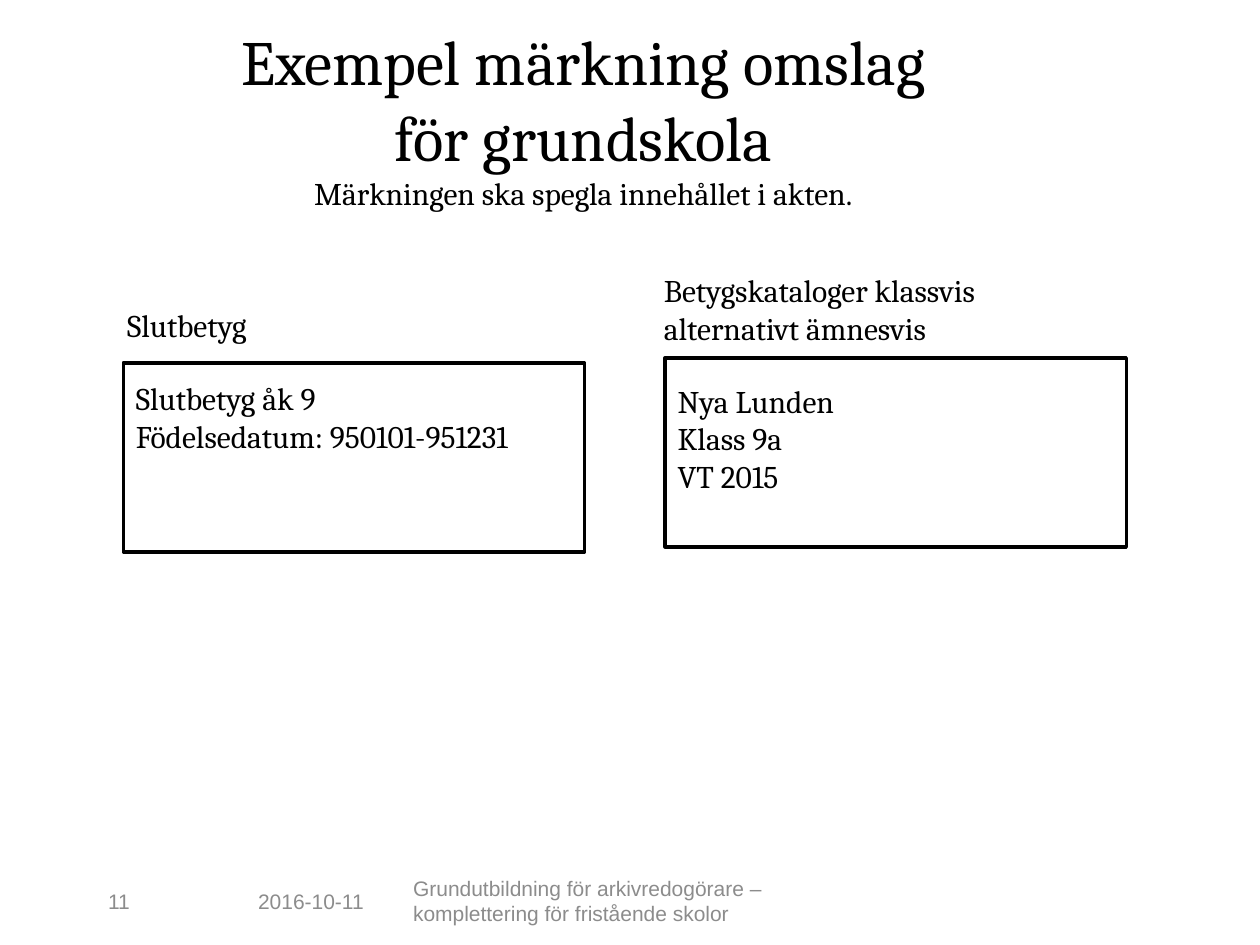
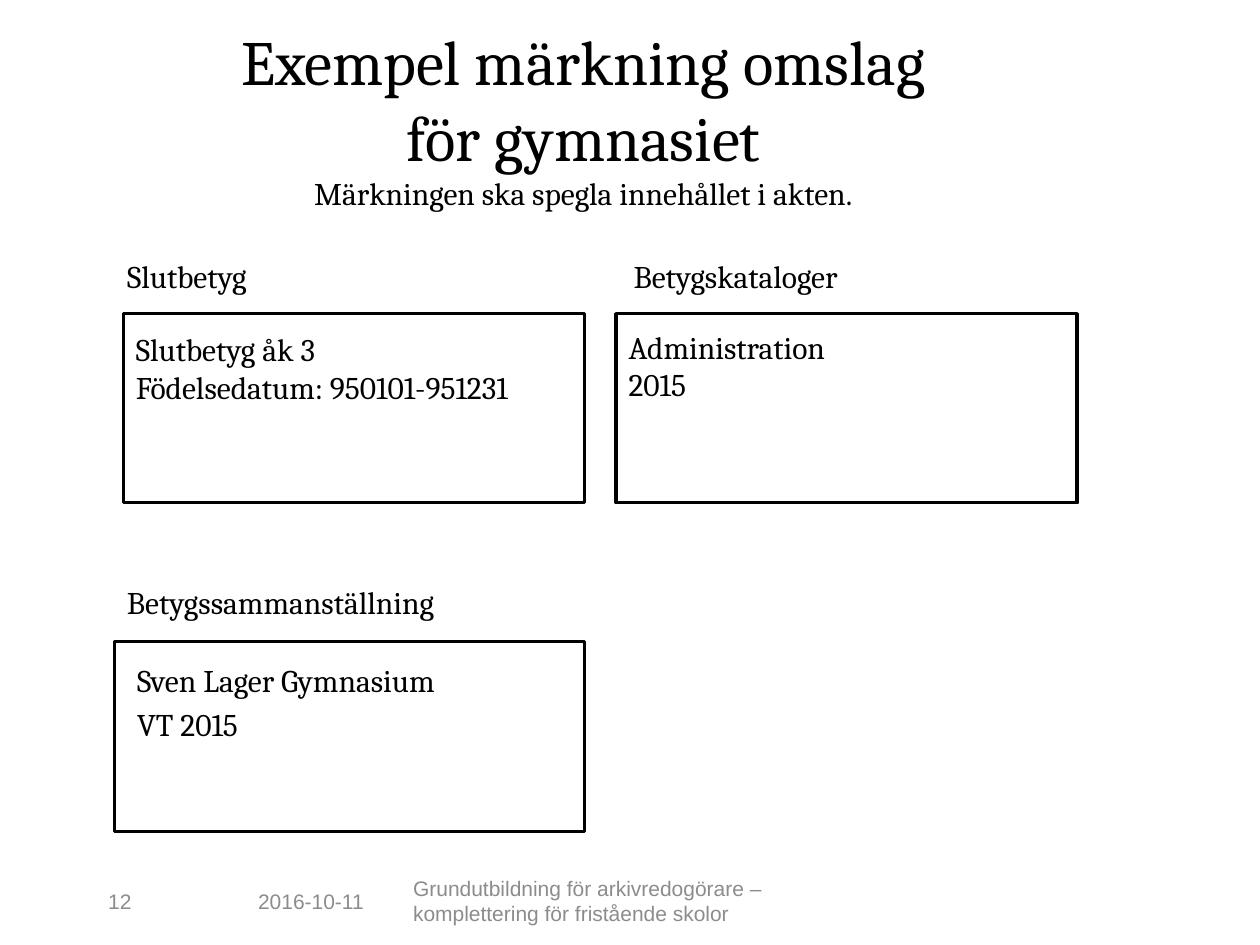
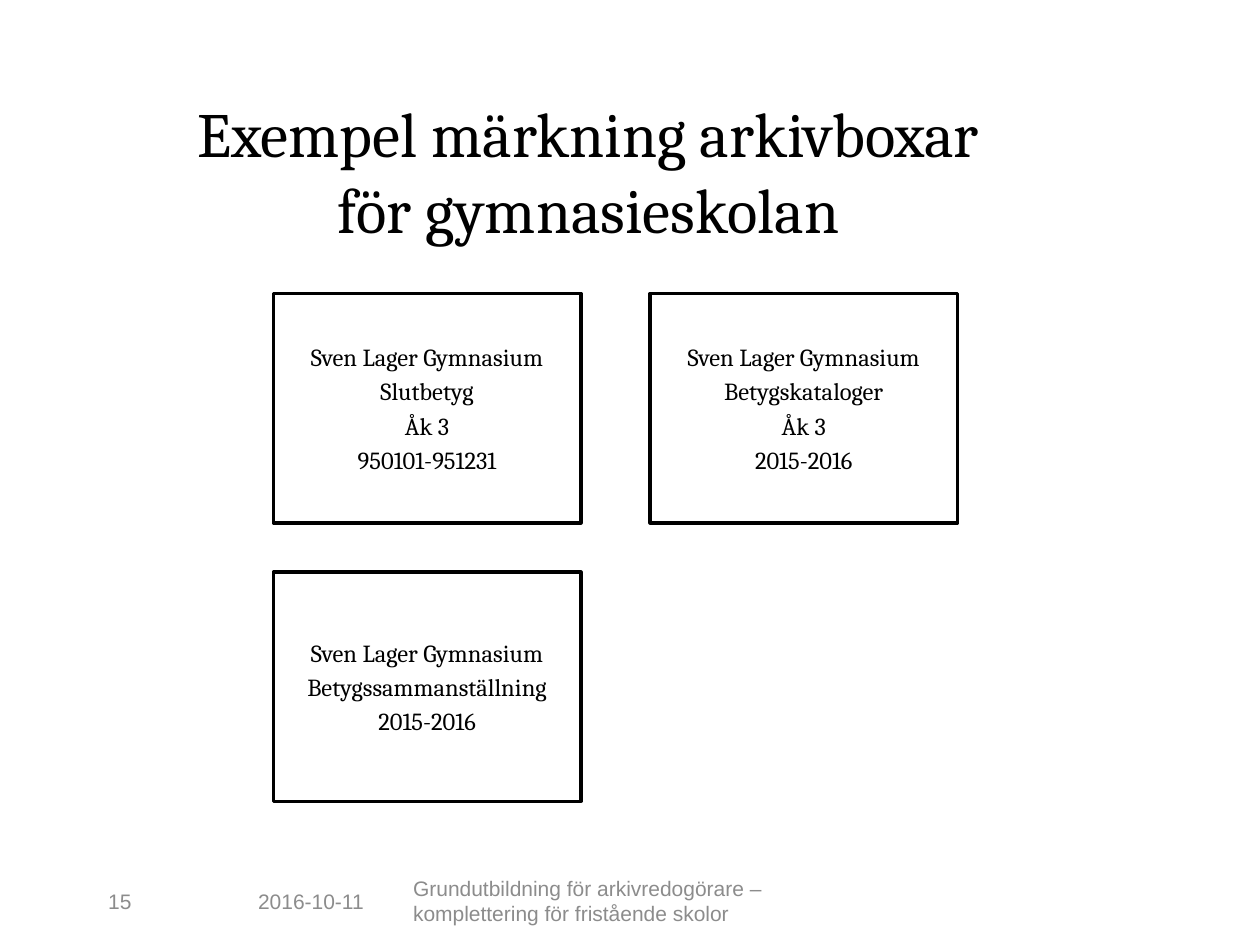
from pptx import Presentation
from pptx.dml.color import RGBColor
from pptx.enum.shapes import MSO_SHAPE
from pptx.enum.text import MSO_ANCHOR, PP_ALIGN
from pptx.util import Pt

PX = 9144  # EMU per px, 100 px to the inch
BLACK = RGBColor(0x00, 0x00, 0x00)
GREY = RGBColor(0x8C, 0x8C, 0x8C)
SERIF, SANS = "Cambria", "Arial"
DATE = "2016-10-11"
COURSE = "Grundutbildning för arkivredogörare – komplettering för fristående skolor"
NOTE = "Märkningen ska spegla innehållet i akten."
SCHOOL = "Sven Lager Gymnasium"


class Deck:
    def __init__(self):
        self.file = Presentation()
        self.file.slide_width = 1000 * PX
        self.file.slide_height = 750 * PX
        self.slide = None

    def page(self, number):
        """Start a slide with its footer."""
        self.slide = self.file.slides.add_slide(self.file.slide_layouts[6])
        for x, w, words in ((76, 119, str(number)), (195, 123, DATE), (318, 395, COURSE)):
            self.text(x, 695, w, 40, [words], size=12, font=SANS, color=GREY,
                      anchor=MSO_ANCHOR.MIDDLE)

    def fill(self, shape, lines, size=18, font=SERIF, color=BLACK,
             align=PP_ALIGN.LEFT, anchor=MSO_ANCHOR.TOP, gap=0):
        """Set one paragraph per line; gap is a share of the text size."""
        frame = shape.text_frame
        frame.word_wrap = True
        frame.vertical_anchor = anchor
        frame.text = "\n".join(lines)
        for index, par in enumerate(frame.paragraphs):
            par.alignment = align
            if index and gap:
                par.space_before = Pt(size * gap)
            for run in par.runs:
                run.font.size = Pt(size)
                run.font.name = font
                run.font.color.rgb = color

    def text(self, x, y, w, h, lines, **style):
        box = self.slide.shapes.add_textbox(x * PX, y * PX, w * PX, h * PX)
        self.fill(box, lines, **style)
        return box

    def title(self, y, w, h, rows, note=None):
        words = "\v".join(rows + [note] if note else rows)
        box = self.text(79, y, w, h, [words], size=36, align=PP_ALIGN.CENTER)
        if note:
            box.text_frame.paragraphs[0].runs[-1].font.size = Pt(18)

    def frame(self, x, y, w, h):
        """Draw the empty outline of a cover or box."""
        rect = self.slide.shapes.add_shape(
            MSO_SHAPE.RECTANGLE, x * PX, y * PX, w * PX, h * PX)
        rect.shadow.inherit = False
        rect.fill.background()
        rect.line.color.rgb = BLACK
        rect.line.width = Pt(2)
        return rect

    def crate(self, x, y, lines):
        """Draw an archive box with a centred label."""
        self.fill(self.frame(x, y, 244, 182), lines, size=14, gap=0.2,
                  align=PP_ALIGN.CENTER, anchor=MSO_ANCHOR.MIDDLE)


def main():
    deck = Deck()

    deck.page(11)
    deck.title(13, 768, 112, ["Exempel märkning omslag", "för grundskola"], NOTE)
    deck.frame(98, 288, 366, 150)
    deck.text(91, 238, 125, 40, ["Slutbetyg"])
    deck.text(98, 296, 366, 71, ["Slutbetyg åk 9", "Födelsedatum: 950101-951231"])
    deck.frame(528, 284, 366, 150)
    deck.text(517, 210, 322, 71, ["Betygskataloger klassvis alternativt ämnesvis"])
    deck.text(528, 298, 366, 101, ["Nya Lunden", "Klass 9a", "VT 2015"])

    deck.page(12)
    deck.title(13, 768, 112, ["Exempel märkning omslag", "för gymnasiet"], NOTE)
    deck.frame(98, 249, 366, 150)
    deck.text(91, 199, 125, 40, ["Slutbetyg"])
    deck.text(98, 257, 366, 71, ["Slutbetyg åk 3", "Födelsedatum: 950101-951231"])
    deck.frame(489, 249, 366, 150)
    deck.text(493, 199, 198, 40, ["Betygskataloger"])
    deck.text(489, 255, 366, 71, ["Administration", "2015"])
    deck.frame(91, 509, 373, 151)
    deck.text(91, 458, 286, 40, ["Betygssammanställning"])
    deck.text(99, 520, 299, 107, [SCHOOL, "VT 2015"], gap=0.2)

    deck.page(15)
    deck.title(70, 776, 85, ["Exempel märkning arkivboxar", "för gymnasieskolan"])
    labels = (
        ["Slutbetyg", "Åk 3", "950101-951231"],
        ["Betygskataloger", "Åk 3", "2015-2016"],
        ["Betygssammanställning", "2015-2016"],
    )
    for index, label in enumerate(labels):
        row, col = divmod(index, 2)
        deck.crate(217 + col * 299, 233 + row * 221, [SCHOOL] + label)

    deck.file.save("out.pptx")


if __name__ == "__main__":
    main()
